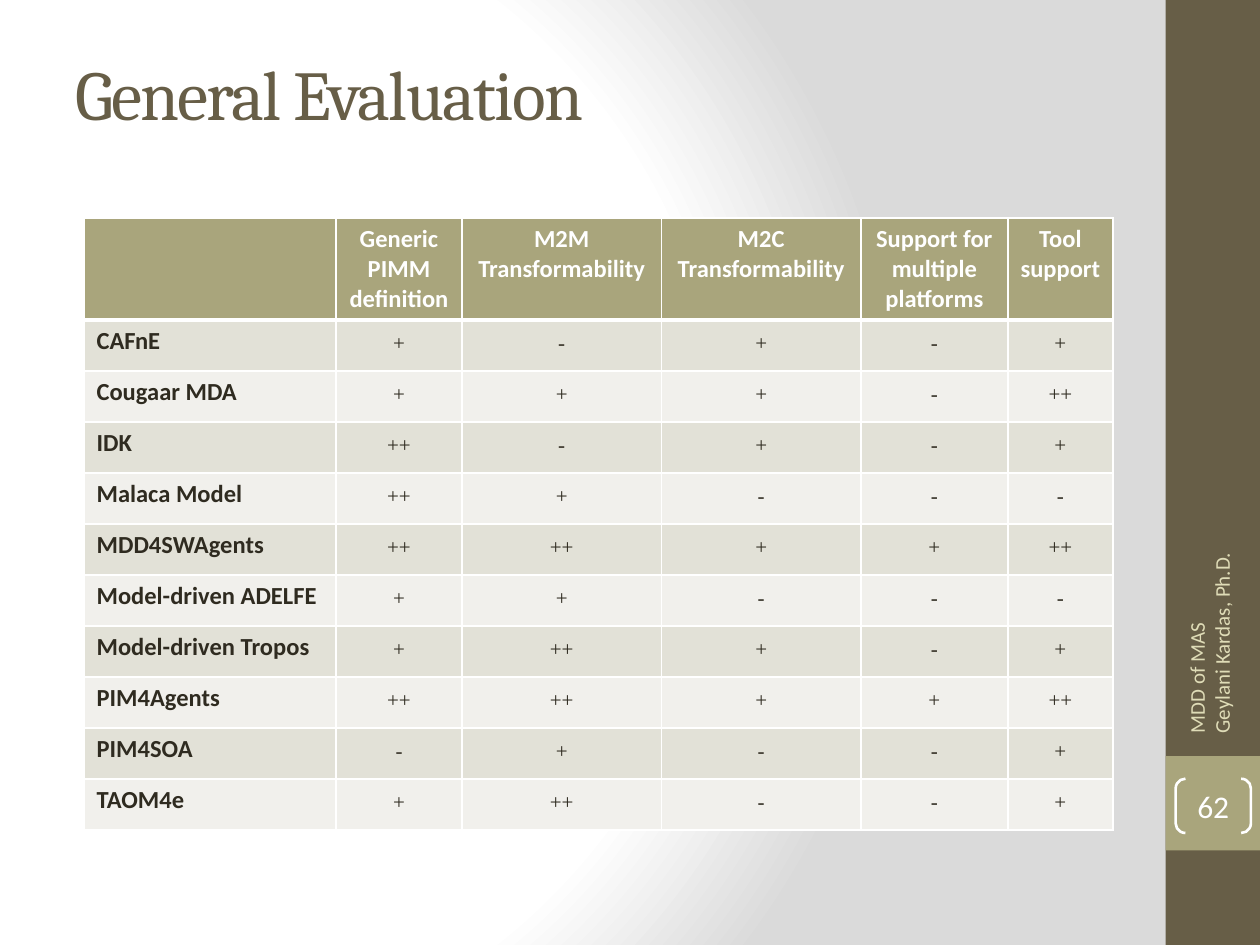
import dataclasses

import pptx
import pptx.dml.color
import pptx.enum.shapes
import pptx.enum.text
import pptx.oxml
import pptx.oxml.ns
import pptx.util

Pt = pptx.util.Pt
Align = pptx.enum.text.PP_ALIGN
Anchor = pptx.enum.text.MSO_ANCHOR
Preset = pptx.enum.shapes.MSO_SHAPE


@dataclasses.dataclass(frozen=True)
class Theme:
    brown: str = "675E47"
    olive: str = "A9A57C"
    cream: str = "DFDCB7"
    ink: str = "2F2B20"
    white: str = "FFFFFF"
    grey: str = "DADADA"
    bands: tuple = ("E2E1D7", "F1F0EC")
    heading_font: str = "Cambria"
    body_font: str = "Calibri"
    rating_font: str = "Times New Roman"
    title_size: float = 40
    number_size: float = 18
    label_size: float = 14
    small_size: float = 12


THEME = Theme()

CRITERIA = ["Generic PIMM definition", "M2M Transformability", "M2C Transformability",
            "Support for multiple platforms", "Tool support"]
RATINGS = [
    ("CAFnE", "+ - + - +"),
    ("Cougaar MDA", "+ + + - ++"),
    ("IDK", "++ - + - +"),
    ("Malaca Model", "++ + - - -"),
    ("MDD4SWAgents", "++ ++ + + ++"),
    ("Model-driven ADELFE", "+ + - - -"),
    ("Model-driven Tropos", "+ ++ + - +"),
    ("PIM4Agents", "++ ++ + + ++"),
    ("PIM4SOA", "- + - - +"),
    ("TAOM4e", "+ ++ - - +"),
]
COLUMN_SHARES = [24, 12, 19, 19, 14, 10]


def rgb(color):
    return pptx.dml.color.RGBColor.from_string(color)


def add_run(paragraph, text, size, color, font=THEME.body_font, bold=False):
    run = paragraph.add_run()
    run.text = text
    run.font.size = Pt(size)
    run.font.name = font
    run.font.bold = bold
    run.font.color.rgb = rgb(color)
    return run


def add_panel(slide, box, fill=None, preset=Preset.RECTANGLE):
    """Add a preset shape with no outline or shadow, filled only if a colour is given."""
    panel = slide.shapes.add_shape(preset, *map(Pt, box))
    panel.shadow.inherit = False
    panel.line.fill.background()
    if fill:
        panel.fill.solid()
        panel.fill.fore_color.rgb = rgb(fill)
    else:
        panel.fill.background()
    return panel


def add_text_area(slide, box):
    area = slide.shapes.add_textbox(*map(Pt, box))
    area.text_frame.word_wrap = True
    area.text_frame.vertical_anchor = Anchor.MIDDLE
    return area


def paint_background(slide):
    """Fill the background with a radial gradient, white at the left to grey."""
    slide.background.fill.gradient()
    gradient = next(slide.element.iter(pptx.oxml.ns.qn("a:gradFill")))
    stops = "".join(
        f'<a:gs pos="{percent * 1000}"><a:srgbClr val="{color}"/></a:gs>'
        for percent, color in ((0, THEME.white), (75, THEME.white), (100, THEME.grey)))
    radial = pptx.oxml.parse_xml(
        f'<a:gradFill {pptx.oxml.ns.nsdecls("a")} rotWithShape="1"><a:gsLst>{stops}</a:gsLst>'
        '<a:path path="circle"><a:fillToRect l="20000" t="50000" r="100000" b="50000"/></a:path>'
        '</a:gradFill>')
    gradient.getparent().replace(gradient, radial)


def add_title(slide, box):
    title = add_text_area(slide, box)
    run = add_run(title.text_frame.paragraphs[0], "General Evaluation",
                  THEME.title_size, THEME.brown, THEME.heading_font)
    run.font._element.set("spc", "-100")


def add_sidebar(slide, box):
    """Draw the side strip with its page number and upright footer."""
    left, top, width, height = box
    add_panel(slide, box, THEME.brown)
    add_panel(slide, (left, top + 432, width, width), THEME.olive)

    brackets = add_panel(slide, (left + 5.8, top + 445, 43, 31), preset=Preset.DOUBLE_BRACKET)
    brackets.adjustments[0] = 0.18
    brackets.line.color.rgb = rgb(THEME.white)
    brackets.line.width = Pt(1.5)
    frame = brackets.text_frame
    frame.margin_left = frame.margin_right = frame.margin_top = frame.margin_bottom = 0
    frame.vertical_anchor = Anchor.MIDDLE
    number = frame.paragraphs[0]
    number.alignment = Align.CENTER
    add_run(number, "62", THEME.number_size, THEME.white)

    footer = add_text_area(slide, (left - 68.4, top + 318.5, 186.5, 28.8))
    footer.rotation = 270
    lines = footer.text_frame.paragraphs[0]
    add_run(lines, "MDD of MAS", THEME.small_size, THEME.cream)
    lines.add_line_break()
    add_run(lines, "Geylani Kardas, Ph.D.", THEME.small_size, THEME.cream)


def style_cell(cell, fill, top=1, bottom=1):
    """Fill a cell and give it white borders, with top and bottom widths in points."""
    cell.fill.solid()
    cell.fill.fore_color.rgb = rgb(fill)
    properties = cell._tc.get_or_add_tcPr()
    for position, (side, width) in enumerate(
            (("L", 1), ("R", 1), ("T", top), ("B", bottom))):
        properties.insert(position, pptx.oxml.parse_xml(
            f'<a:ln{side} {pptx.oxml.ns.nsdecls("a")} w="{Pt(width)}"><a:solidFill>'
            f'<a:srgbClr val="{THEME.white}"/></a:solidFill></a:ln{side}>'))


def add_criterion(cell, criterion):
    cell.margin_left = cell.margin_right = Pt(6)
    paragraph = cell.text_frame.paragraphs[0]
    paragraph.alignment = Align.CENTER
    add_run(paragraph, criterion, THEME.label_size, THEME.white, bold=True)


def add_rating(cell, rating):
    cell.margin_left = cell.margin_right = Pt(5)
    cell.margin_top = cell.margin_bottom = 0
    paragraph = cell.text_frame.paragraphs[0]
    paragraph.alignment = Align.CENTER
    paragraph.line_spacing = 1.5
    add_run(paragraph, rating, THEME.small_size, THEME.ink, THEME.rating_font)


def add_evaluation_table(slide, box, header_height=58.4):
    width, height = box[2:]
    table = slide.shapes.add_table(
        len(RATINGS) + 1, len(COLUMN_SHARES), *map(Pt, box)).table
    table.first_row = table.horz_banding = False
    for column, share in zip(table.columns, COLUMN_SHARES):
        column.width = Pt(width * share / sum(COLUMN_SHARES))
    for row in table.rows:
        row.height = Pt((height - header_height) / len(RATINGS))
    table.rows[0].height = Pt(header_height)

    for index in range(len(COLUMN_SHARES)):
        style_cell(table.cell(0, index), THEME.olive, bottom=3)
    for index, criterion in enumerate(CRITERIA, 1):
        add_criterion(table.cell(0, index), criterion)

    for row, (method, ratings) in enumerate(RATINGS, 1):
        for index in range(len(COLUMN_SHARES)):
            style_cell(table.cell(row, index), THEME.bands[(row - 1) % 2],
                       top=3 if row == 1 else 1)
        add_run(table.cell(row, 0).text_frame.paragraphs[0], method,
                THEME.label_size, THEME.ink, bold=True)
        for index, rating in enumerate(ratings.split(), 1):
            add_rating(table.cell(row, index), rating)


def main():
    deck = pptx.Presentation()
    deck.slide_width, deck.slide_height = Pt(720), Pt(540)
    slide = deck.slides.add_slide(deck.slide_layouts[6])
    paint_background(slide)
    add_sidebar(slide, (666, 0, 54, 540))
    add_title(slide, (36, 21.6, 600, 62.6))
    add_evaluation_table(slide, (48, 124.5, 588, 350))
    deck.save("out.pptx")


if __name__ == "__main__":
    main()
